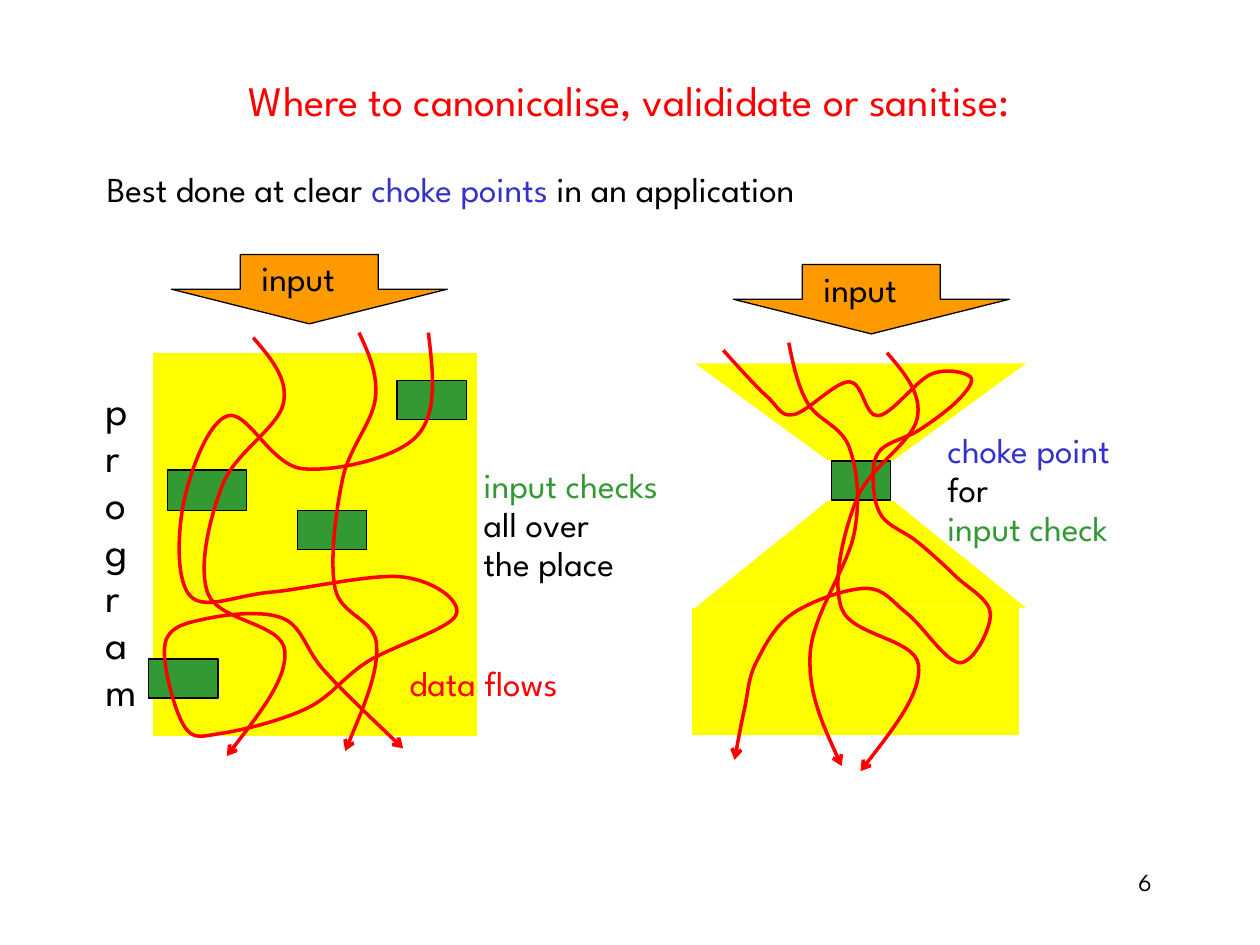
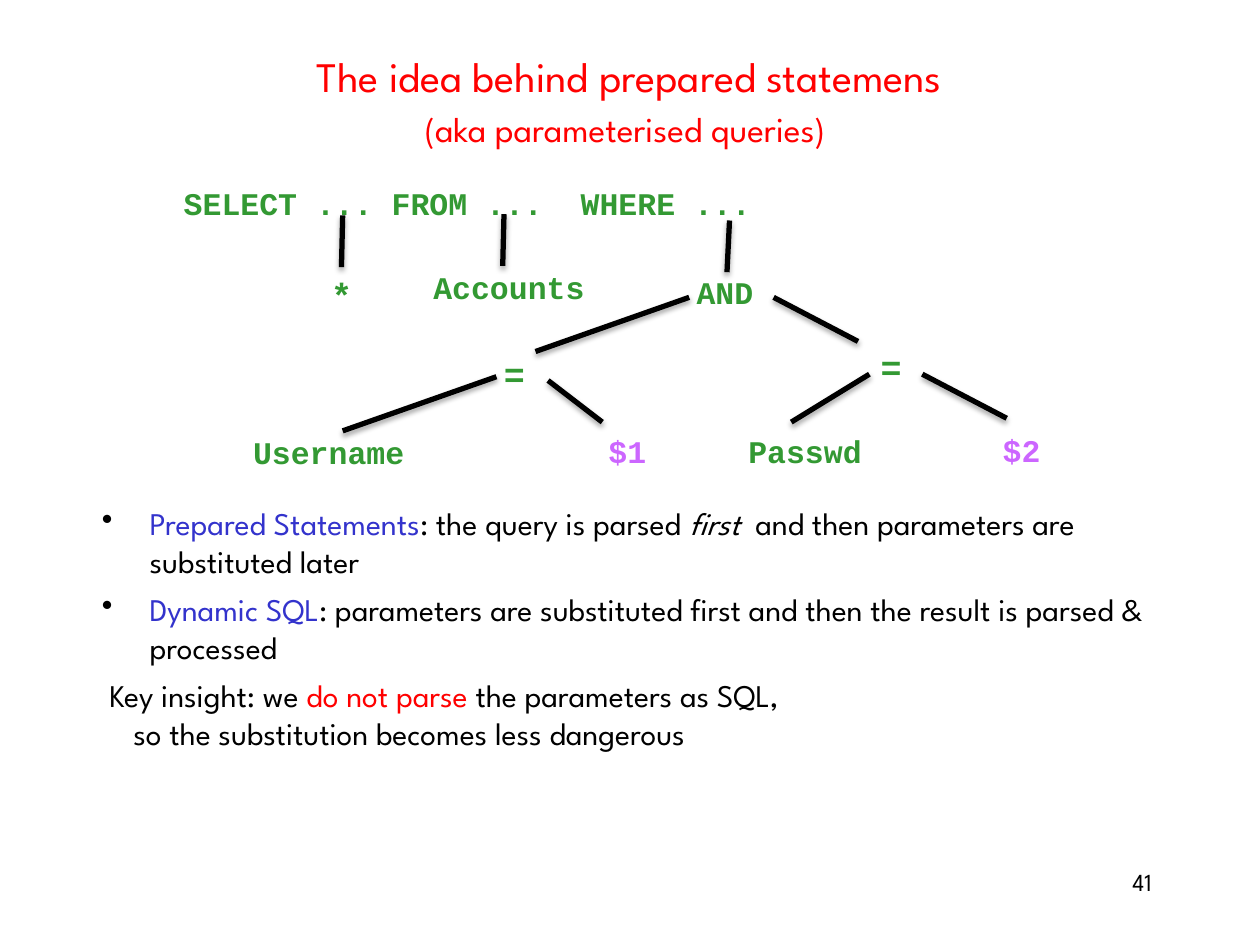
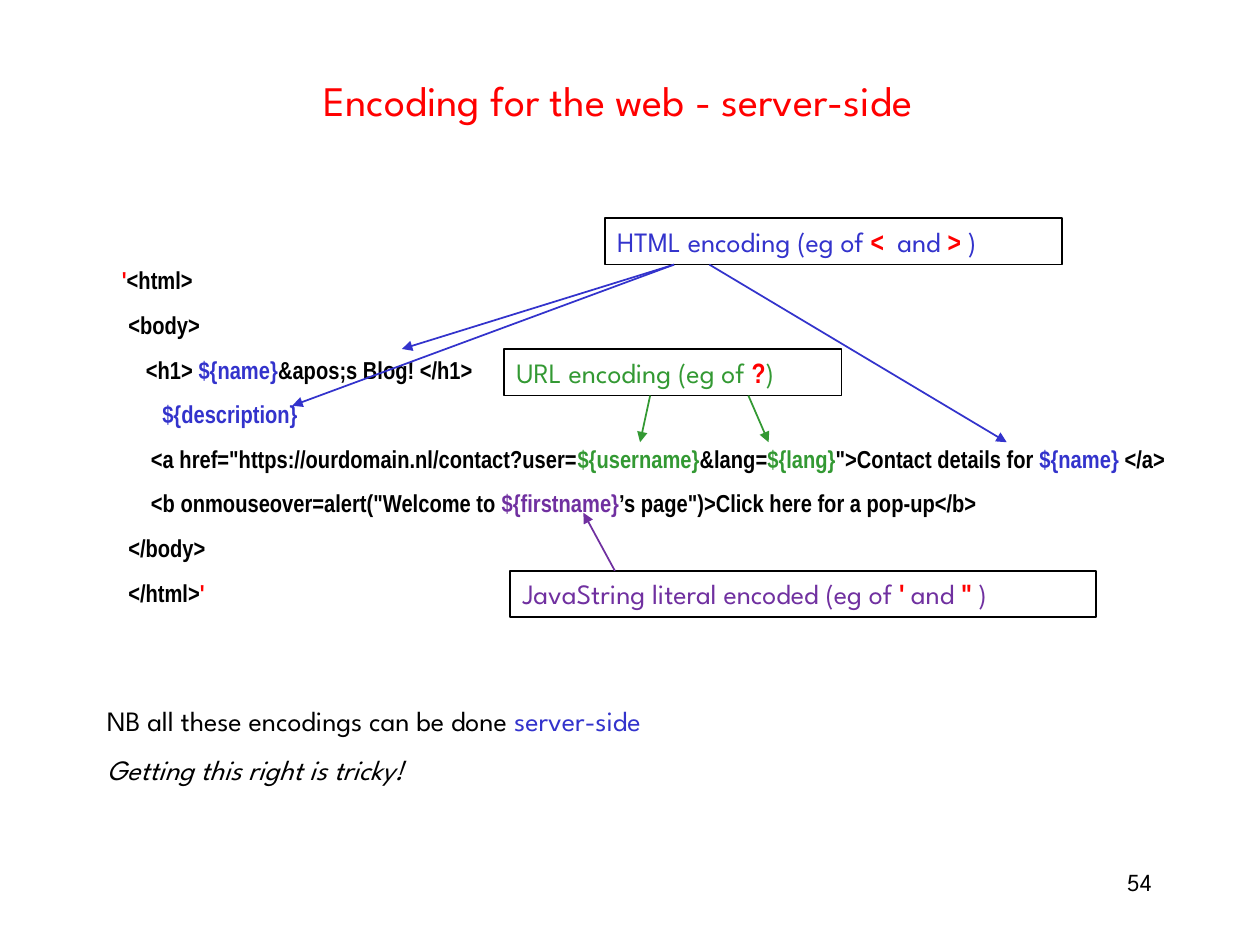
from dataclasses import dataclass
from typing import NamedTuple

from lxml import etree
from pptx import Presentation
from pptx.dml.color import RGBColor
from pptx.enum.shapes import MSO_CONNECTOR, MSO_SHAPE
from pptx.enum.text import MSO_ANCHOR, PP_ALIGN
from pptx.oxml.ns import qn
from pptx.util import Inches, Pt

BLACK = RGBColor(0x00, 0x00, 0x00)
WHITE = RGBColor(0xFF, 0xFF, 0xFF)
RED = RGBColor(0xFF, 0x00, 0x00)
BLUE = RGBColor(0x33, 0x33, 0xCC)
GREEN = RGBColor(0x33, 0x99, 0x33)
YELLOW = RGBColor(0xFF, 0xFF, 0x00)
ORANGE = RGBColor(0xFF, 0x99, 0x00)
PURPLE = RGBColor(0x70, 0x30, 0xA0)
VIOLET = RGBColor(0xCC, 0x66, 0xFF)

SANS = "League Spartan"
NARROW = "Arial Narrow"
MONO = "Courier New"

LEFT, CENTER, RIGHT = PP_ALIGN.LEFT, PP_ALIGN.CENTER, PP_ALIGN.RIGHT
TOP, MIDDLE = MSO_ANCHOR.TOP, MSO_ANCHOR.MIDDLE
RECTANGLE = MSO_SHAPE.RECTANGLE
TRAPEZOID = MSO_SHAPE.TRAPEZOID
DOWN_ARROW = MSO_SHAPE.DOWN_ARROW
STRAIGHT = MSO_CONNECTOR.STRAIGHT

LOOSE, TIGHT = 1.16, 0.93
MONO_CHAR = 0.15


class Point(NamedTuple):
    x: float
    y: float


class Box(NamedTuple):
    left: float
    top: float
    width: float
    height: float

    def inches(self):
        return [Inches(length) for length in self]


class Span(NamedTuple):
    text: str
    color: RGBColor = BLACK
    size: float | None = None
    font: str | None = None
    bold: bool | None = None
    italic: bool = False


@dataclass
class Line:
    spans: list[Span]
    indent: float = 0
    bullet: bool = False
    before: float | None = None


class Node(NamedTuple):
    text: str
    left: float
    top: float
    color: RGBColor = GREEN
    size: float = 18


class Link(NamedTuple):
    start: Point
    end: Point
    color: RGBColor = BLACK


class Callout(NamedTuple):
    box: Box
    spans: list[Span]


TITLE = Box(0.75, 0.3, 8.49, 0.92)
BODY = Box(0.75, 1.23, 8.49, 5.42)
PAGE_NUMBER = Box(7.17, 6.83, 2.07, 0.49)


def write(shape, lines: list[Line], *, size: float = 20, font: str = SANS,
          bold: bool = False, align=LEFT, anchor=TOP,
          spacing: float | None = None, before: float = 0) -> None:
    frame = shape.text_frame
    frame.word_wrap = True
    frame.vertical_anchor = anchor
    for index, line in enumerate(lines):
        paragraph = frame.add_paragraph() if index else frame.paragraphs[0]
        paragraph.alignment = align
        paragraph.line_spacing = spacing
        paragraph.space_before = Pt(before if line.before is None else line.before)
        properties = paragraph._p.get_or_add_pPr()
        properties.set("marL", str(Inches(line.indent)))
        if line.bullet:
            properties.set("indent", str(-Inches(line.indent)))
            color = etree.SubElement(properties, qn("a:buClr"))
            etree.SubElement(color, qn("a:srgbClr"), val=str(BLACK))
            etree.SubElement(properties, qn("a:buChar"), char="•")
        for span in line.spans:
            run = paragraph.add_run()
            run.text = span.text
            run.font.size = Pt(span.size or size)
            run.font.name = span.font or font
            run.font.bold = bold if span.bold is None else span.bold
            run.font.italic = span.italic
            run.font.color.rgb = span.color


def add_text(slide, box: Box, lines: list[Line], **style) -> None:
    write(slide.shapes.add_textbox(*box.inches()), lines, **style)


def add_block(slide, kind, box: Box, fill: RGBColor | None, outline: RGBColor,
              width: float = 0.75):
    block = slide.shapes.add_shape(kind, *box.inches())
    block.shadow.inherit = False
    if fill is None:
        block.fill.background()
    else:
        block.fill.solid()
        block.fill.fore_color.rgb = fill
    block.line.color.rgb = outline
    block.line.width = Pt(width)
    return block


def add_arrowhead(line, kind: str) -> None:
    etree.SubElement(line._get_or_add_ln(), qn("a:tailEnd"), type=kind)


def add_link(slide, link: Link, width: float, *, arrow: bool = False,
             shadow: bool = False) -> None:
    ends = [Inches(length) for length in (*link.start, *link.end)]
    connector = slide.shapes.add_connector(STRAIGHT, *ends)
    connector.line.color.rgb = link.color
    connector.line.width = Pt(width)
    if arrow:
        add_arrowhead(connector.line, "triangle")
    effects = etree.SubElement(connector._element.spPr, qn("a:effectLst"))
    if shadow:
        outer = etree.SubElement(effects, qn("a:outerShdw"), blurRad=str(Pt(3.1)),
                                 dist=str(Pt(1.8)), dir="5400000", rotWithShape="0")
        color = etree.SubElement(outer, qn("a:srgbClr"), val=str(BLACK))
        etree.SubElement(color, qn("a:alpha"), val="35000")


def midpoint(a: Point, b: Point) -> Point:
    return Point((a.x + b.x) / 2, (a.y + b.y) / 2)


def spline_controls(points: list[Point]) -> list[tuple[Point, Point]]:
    arriving, leaving = {}, {}
    for i in range(1, len(points) - 1):
        here, prior, following = points[i], points[i - 1], points[i + 1]
        dx, dy = (following.x - prior.x) / 6, (following.y - prior.y) / 6
        arriving[i] = Point(here.x - dx, here.y - dy)
        leaving[i] = Point(here.x + dx, here.y + dy)
    last = len(points) - 1
    leaving[0] = midpoint(points[0], arriving[1])
    arriving[last] = midpoint(leaving[last - 1], points[last])
    return [(leaving[i], arriving[i + 1]) for i in range(last)]


def add_flow(slide, points: list[Point]) -> None:
    corners = [(Inches(p.x), Inches(p.y)) for p in points]
    builder = slide.shapes.build_freeform(*corners[0])
    builder.add_line_segments(corners[1:], close=False)
    flow = builder.convert_to_shape()
    flow.shadow.inherit = False
    flow.fill.background()
    flow.line.color.rgb = RED
    flow.line.width = Pt(2)
    add_arrowhead(flow.line, "arrow")
    route = flow._element.spPr.find(".//" + qn("a:path"))
    local = [Point(int(p.get("x")), int(p.get("y"))) for p in route.iter(qn("a:pt"))]
    for segment in route.findall(qn("a:lnTo")):
        route.remove(segment)
    for controls, end in zip(spline_controls(local), local[1:]):
        curve = etree.SubElement(route, qn("a:cubicBezTo"))
        for p in (*controls, end):
            etree.SubElement(curve, qn("a:pt"), x=str(round(p.x)), y=str(round(p.y)))


def new_slide(deck, number: int, title: list[Line], title_box: Box = TITLE):
    slide = deck.slides.add_slide(deck.slide_layouts[6])
    slide.background.fill.solid()
    slide.background.fill.fore_color.rgb = WHITE
    add_text(slide, title_box, title, size=24, align=CENTER, anchor=MIDDLE, spacing=LOOSE)
    add_text(slide, PAGE_NUMBER, [Line([Span(str(number))])], size=14, align=RIGHT)
    return slide


WINDING = [Point(2.01, 2.68), Point(2.25, 3.2), Point(1.77, 3.84), Point(1.65, 4.71),
           Point(2.26, 5.16), Point(1.8, 6)]
FLOWS = [
    WINDING,
    [Point(p.x + 5.03, p.y + 0.12) for p in WINDING],
    [Point(6.26, 2.72), Point(6.41, 3.2), Point(6.74, 3.55), Point(6.78, 4.23),
     Point(6.43, 5.19), Point(6.68, 6.08)],
    [Point(2.85, 2.64), Point(2.98, 3.16), Point(2.72, 3.8), Point(2.66, 4.67),
     Point(2.99, 5.12), Point(2.74, 5.96)],
    [Point(3.4, 2.64), Point(3.31, 3.46), Point(2.4, 3.72), Point(1.81, 3.3),
     Point(1.46, 3.98), Point(1.51, 4.73), Point(2.15, 4.7), Point(3.2, 4.58),
     Point(3.62, 4.88), Point(2.92, 5.25), Point(2.44, 5.62), Point(1.76, 5.82),
     Point(1.46, 5.76), Point(1.31, 5.11), Point(1.64, 4.91), Point(2.25, 4.91),
     Point(2.58, 5.33), Point(3.2, 5.94)],
    [Point(5.74, 2.78), Point(6.09, 3.15), Point(6.3, 3.29), Point(6.74, 3.03),
     Point(6.97, 3.3), Point(7.39, 2.97), Point(7.7, 2.99), Point(7.61, 3.17),
     Point(7.3, 3.41), Point(6.99, 3.57), Point(6.93, 3.81), Point(7, 4.1),
     Point(7.28, 4.3), Point(7.58, 4.57), Point(7.86, 4.87), Point(7.62, 5.26),
     Point(7.2, 4.87), Point(6.87, 4.67), Point(6.29, 4.87), Point(6, 5.26),
     Point(5.91, 5.62), Point(5.83, 6.03)],
]
CHECKS = [Box(1.33, 3.73, 0.63, 0.32), Box(6.6, 3.66, 0.47, 0.31),
          Box(2.36, 4.05, 0.55, 0.31), Box(1.18, 5.23, 0.55, 0.31),
          Box(3.15, 3.02, 0.55, 0.31)]


def choke_point_slide(deck) -> None:
    slide = new_slide(deck, 6, [Line([Span("Where to canonicalise, valididate or sanitise:", RED)])])
    add_text(slide, BODY, [Line([Span("Best done at clear "), Span("choke points ", BLUE),
                                 Span("in an application")])], spacing=LOOSE, before=6)

    outlet = add_block(slide, TRAPEZOID, Box(5.5, 3.97, 2.66, 0.86), YELLOW, WHITE)
    outlet.adjustments[0] = 1.24
    funnel = add_block(slide, TRAPEZOID, Box(5.5, 2.88, 2.66, 0.78), YELLOW, WHITE)
    funnel.adjustments[0] = 1.37
    funnel._element.spPr.xfrm.set("flipV", "1")
    add_block(slide, RECTANGLE, Box(5.5, 4.83, 2.58, 1), YELLOW, YELLOW)
    add_block(slide, RECTANGLE, Box(1.21, 2.8, 2.58, 3.05), YELLOW, WHITE)

    for left, top in ((1.36, 2.02), (5.82, 2.1)):
        arrow = add_block(slide, DOWN_ARROW, Box(left, top, 2.19, 0.55), ORANGE, BLACK)
        write(arrow, [Line([Span(" input")])], spacing=TIGHT)
    for check in CHECKS:
        add_block(slide, RECTANGLE, check, GREEN, BLACK)
    for flow in FLOWS:
        add_flow(slide, flow)

    labels = [
        (Box(7.42, 3.38, 1.78, 1.04),
         [Span("choke point", BLUE), Span("for"), Span("input check", GREEN)]),
        (Box(3.74, 3.66, 1.92, 1.04),
         [Span("input checks", GREEN), Span("all over"), Span("the place")]),
        (Box(3.15, 5.23, 1.6, 0.41), [Span("data flows", RED)]),
        (Box(0.74, 3.03, 0.5, 2.73), [Span(letter, size=24) for letter in "program"]),
    ]
    for box, spans in labels:
        add_text(slide, box, [Line([span]) for span in spans], spacing=TIGHT)


TREE_NODES = [
    Node("SELECT ... FROM ...  WHERE ...", 1.36, 1.41),
    Node("Accounts", 3.34, 2.08),
    Node("AND", 5.43, 2.12),
    Node("*", 2.53, 2.12, size=20),
    Node("=", 3.9, 2.75, size=20),
    Node("=", 6.89, 2.69, size=20),
    Node("Username", 1.91, 3.39),
    Node("Passwd", 5.84, 3.38),
    Node("$1", 4.73, 3.38, VIOLET),
    Node("$2", 7.86, 3.37, VIOLET),
]
TREE_LINKS = [
    Link(Point(2.72, 1.71), Point(2.71, 2.12)),
    Link(Point(4, 1.7), Point(3.99, 2.11)),
    Link(Point(5.79, 1.75), Point(5.77, 2.16)),
    Link(Point(4.25, 2.79), Point(5.47, 2.36)),
    Link(Point(6.14, 2.36), Point(6.81, 2.71)),
    Link(Point(2.72, 3.42), Point(3.94, 2.99)),
    Link(Point(4.35, 3.02), Point(4.78, 3.35)),
    Link(Point(6.28, 3.35), Point(6.9, 2.97)),
    Link(Point(7.32, 2.97), Point(7.99, 3.32)),
]


def prepared_statement_slide(deck) -> None:
    slide = new_slide(deck, 41, [
        Line([Span("The idea behind prepared statemens", RED)]),
        Line([Span("(aka parameterised queries) ", RED, size=20)]),
    ])
    add_text(slide, Box(0.71, 3.95, 8.94, 2.36), [
        Line([Span("Prepared Statements", BLUE), Span(": the query is parsed "),
              Span("first ", italic=True),
              Span(" and then parameters are substituted later")], 0.38, True),
        Line([Span("Dynamic SQL", BLUE),
              Span(": parameters are substituted first and then the result is "
                   "parsed & processed")], 0.38, True),
        Line([Span("Key insight: we"), Span(" do not parse ", RED),
              Span("the parameters as SQL,")], 0.06),
        Line([Span("so the substitution becomes less dangerous")], 0.25, before=0),
    ], size=18, before=6)
    for node in TREE_NODES:
        box = Box(node.left, node.top, len(node.text) * MONO_CHAR + 0.25, 0.36)
        add_text(slide, box, [Line([Span(node.text, node.color)])],
                 size=node.size, font=MONO, bold=True)
    for link in TREE_LINKS:
        add_link(slide, link, 3, shadow=True)


def literal(text: str) -> Span:
    return Span(text, RED, font=NARROW, bold=True)


CODE = [
    Line([Span("'", RED), Span("<html>")], 0.12),
    Line([Span("<body>")], 0.17),
    Line([Span("<h1> "), Span("${name}", BLUE), Span("&apos;s Blog! </h1>")], 0.31),
    Line([Span("${description}", BLUE)], 0.44),
    Line([Span('<a href="https://ourdomain.nl/contact?user='), Span("${username}", GREEN),
          Span("&lang="), Span("${lang}", GREEN), Span('">Contact details for '),
          Span("${name} ", BLUE), Span("</a>")], 0.35),
    Line([Span('<b onmouseover=alert("Welcome to '), Span("${firstname}", PURPLE),
          Span("’s page\")>Click here for a pop-up</b>")], 0.35),
    Line([Span("</body>")], 0.17),
    Line([Span("</html>"), Span("'", RED)], 0.17),
]
CALLOUTS = [
    Callout(Box(4.8, 1.73, 3.63, 0.37),
            [Span("HTML encoding (eg of ", BLUE), literal("< "), Span(" and ", BLUE),
             literal(">"), Span(" )", BLUE)]),
    Callout(Box(4, 2.77, 2.68, 0.37),
            [Span("URL encoding (eg of ", GREEN), literal("?"), Span(")", GREEN)]),
    Callout(Box(4.05, 4.53, 4.65, 0.37),
            [Span("JavaString literal encoded (eg of ", PURPLE), literal("' "),
             Span("and ", PURPLE), literal('" '), Span(")", PURPLE)]),
]
POINTERS = [
    Link(Point(5.35, 2.1), Point(3.19, 2.77), BLUE),
    Link(Point(5.35, 2.1), Point(2.32, 3.22), BLUE),
    Link(Point(5.63, 2.1), Point(7.99, 3.51), BLUE),
    Link(Point(5.16, 3.14), Point(5.08, 3.51), GREEN),
    Link(Point(5.94, 3.14), Point(6.1, 3.51), GREEN),
    Link(Point(4.88, 4.53), Point(4.63, 4.07), PURPLE),
]


def web_encoding_slide(deck) -> None:
    slide = new_slide(deck, 54, [Line([Span("Encoding for the web - server-side", RED)])],
                      TITLE._replace(left=0.66))
    add_text(slide, Box(0.75, 2.02, 8.66, 2.9), CODE, size=14, font=NARROW, bold=True,
             spacing=LOOSE, before=6)
    add_text(slide, Box(0.75, 5.49, 8.66, 0.9), [
        Line([Span("NB all these encodings can be done "), Span("server-side", BLUE)]),
        Line([Span("Getting this right is tricky!", italic=True)]),
    ], size=16, spacing=LOOSE, before=6)
    for callout in CALLOUTS:
        frame = add_block(slide, RECTANGLE, callout.box, None, BLACK, 1)
        write(frame, [Line(callout.spans)], size=16)
    for pointer in POINTERS:
        add_link(slide, pointer, 1, arrow=True)


def main() -> None:
    deck = Presentation()
    deck.slide_width, deck.slide_height = Inches(10), Inches(7.5)
    choke_point_slide(deck)
    prepared_statement_slide(deck)
    web_encoding_slide(deck)
    deck.save("out.pptx")


if __name__ == "__main__":
    main()
